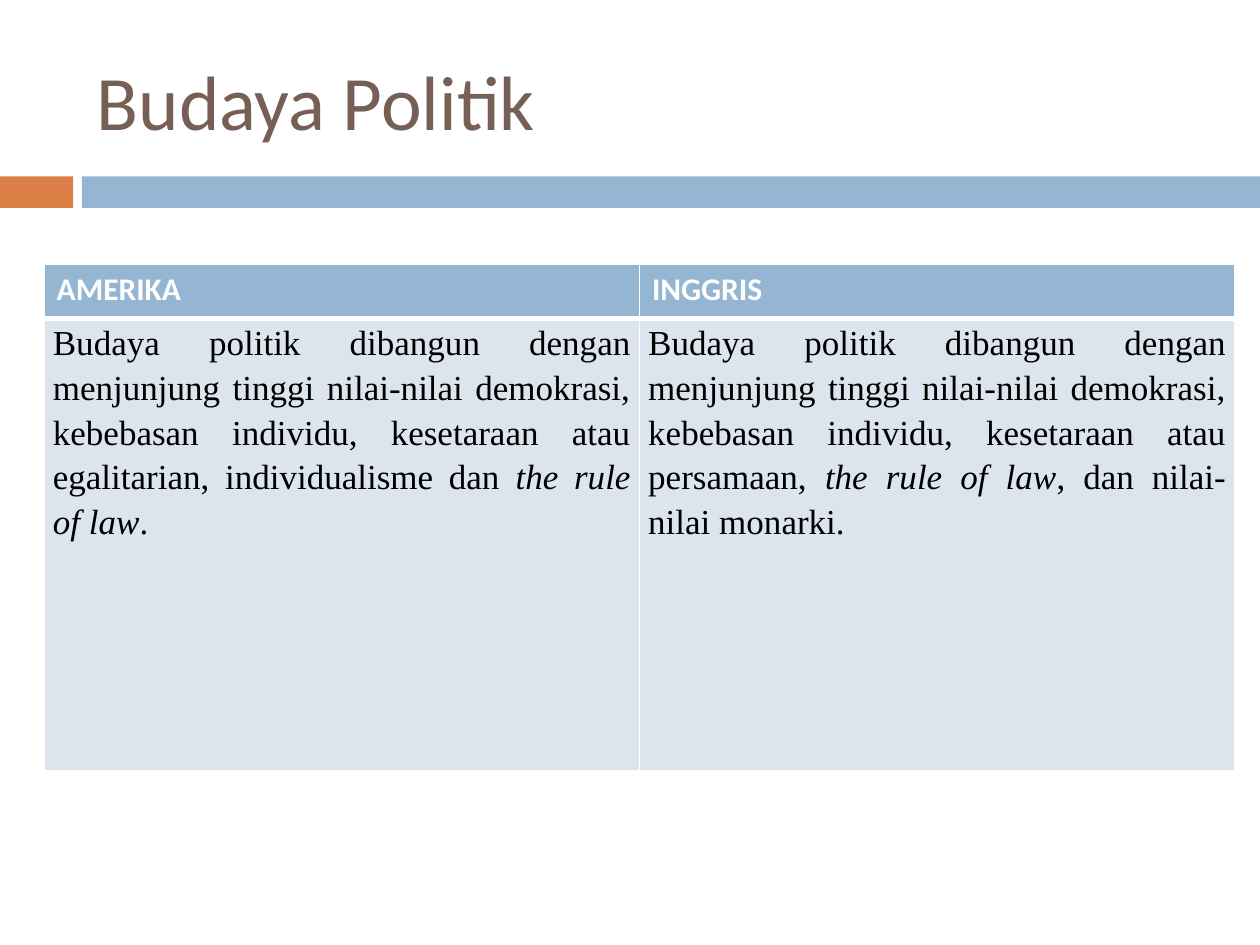
from dataclasses import dataclass

from lxml import etree
from pptx import Presentation
from pptx import util as u
from pptx.dml.color import RGBColor
from pptx.enum import shapes, text
from pptx.oxml import ns


@dataclass(frozen=True)
class Theme:
    accent: str = "DD8047"
    main: str = "94B6D2"
    pale: str = "DCE5EE"
    brown: str = "775F55"
    white: str = "FFFFFF"
    black: str = "000000"
    sans: str = "Calibri"
    serif: str = "Times New Roman"
    title: int = 44
    head: int = 18
    body: int = 20


THEME = Theme()
WIDE, HIGH = 10, 7.5
HEADS = ["AMERIKA", "INGGRIS"]
START = ("Budaya politik dibangun dengan menjunjung tinggi nilai-nilai "
         "demokrasi, kebebasan individu, kesetaraan atau ")
LAW = "the rule of law"
# Each text is plain, italic, plain
TEXTS = [
    (START + "egalitarian, individualisme dan ", LAW, "."),
    (START + "persamaan, ", LAW, ", dan nilai-nilai monarki."),
]


def inch(box):
    return [u.Inches(n) for n in box]


def paint(item, color):
    item.fill.solid()
    item.fill.fore_color.rgb = RGBColor.from_string(color)


def style(font, name, size, color, bold=False):
    font.name, font.size, font.bold = name, u.Pt(size), bold
    font.color.rgb = RGBColor.from_string(color)


def edge(cell, **sides):
    """Draw white cell borders, given as side=points."""
    props = cell._tc.get_or_add_tcPr()
    for spot, (side, size) in enumerate(sides.items()):
        line = etree.Element(ns.qn(f"a:ln{side}"), w=str(u.Pt(size)))
        fill = etree.SubElement(line, ns.qn("a:solidFill"))
        etree.SubElement(fill, ns.qn("a:srgbClr"), val=THEME.white)
        props.insert(spot, line)


def add_title(slide, box, words):
    frame = slide.shapes.add_textbox(*inch(box)).text_frame
    frame.word_wrap = True
    frame.vertical_anchor = text.MSO_ANCHOR.MIDDLE
    frame.text = words
    style(frame.paragraphs[0].runs[0].font, THEME.sans, THEME.title, THEME.brown)


def add_band(slide, box):
    left, top, width, height = box
    short, gap = 0.058 * width, 0.007 * width
    start = short + gap
    parts = [(left, short, THEME.accent),
             (left + start, width - start, THEME.main)]
    for x, span, color in parts:
        bar = slide.shapes.add_shape(
            shapes.MSO_SHAPE.RECTANGLE, *inch((x, top, span, height)))
        bar.shadow.inherit = False
        bar.line.fill.background()
        paint(bar, color)


def fill_head(cell, words):
    cell.text = words
    style(cell.text_frame.paragraphs[0].runs[0].font,
          THEME.sans, THEME.head, THEME.white, True)
    paint(cell, THEME.main)
    edge(cell, L=1, R=1, T=1, B=3)


def fill_body(cell, parts):
    cell.margin_left = cell.margin_right = u.Inches(0.07)
    cell.margin_top = cell.margin_bottom = 0
    para = cell.text_frame.paragraphs[0]
    para.alignment = text.PP_ALIGN.JUSTIFY
    para.line_spacing = 1.15
    for spot, words in enumerate(parts):
        run = para.add_run()
        run.text = words
        style(run.font, THEME.serif, THEME.body, THEME.black)
        run.font.italic = spot == 1
    paint(cell, THEME.pale)
    edge(cell, L=1, R=1, T=3, B=1)


def add_grid(slide, box, head):
    height = box[3]
    grid = slide.shapes.add_table(2, len(HEADS), *inch(box)).table
    for row, size in zip(grid.rows, (head, height - head)):
        row.height = u.Inches(size)
    for col, (name, parts) in enumerate(zip(HEADS, TEXTS)):
        fill_head(grid.cell(0, col), name)
        fill_body(grid.cell(1, col), parts)


def main():
    deck = Presentation()
    deck.slide_width, deck.slide_height = inch((WIDE, HIGH))
    slide = deck.slides.add_slide(deck.slide_layouts[6])
    # Colour band under the title
    add_band(slide, (0, 1.4, WIDE, HIGH / 30))
    add_title(slide, (0.67, 0.25, 8.92, 1.08), "Budaya Politik")
    # Comparison table
    add_grid(slide, (0.35, 2.1, 9.45, 4.02), 0.43)
    deck.save("out.pptx")


if __name__ == "__main__":
    main()
